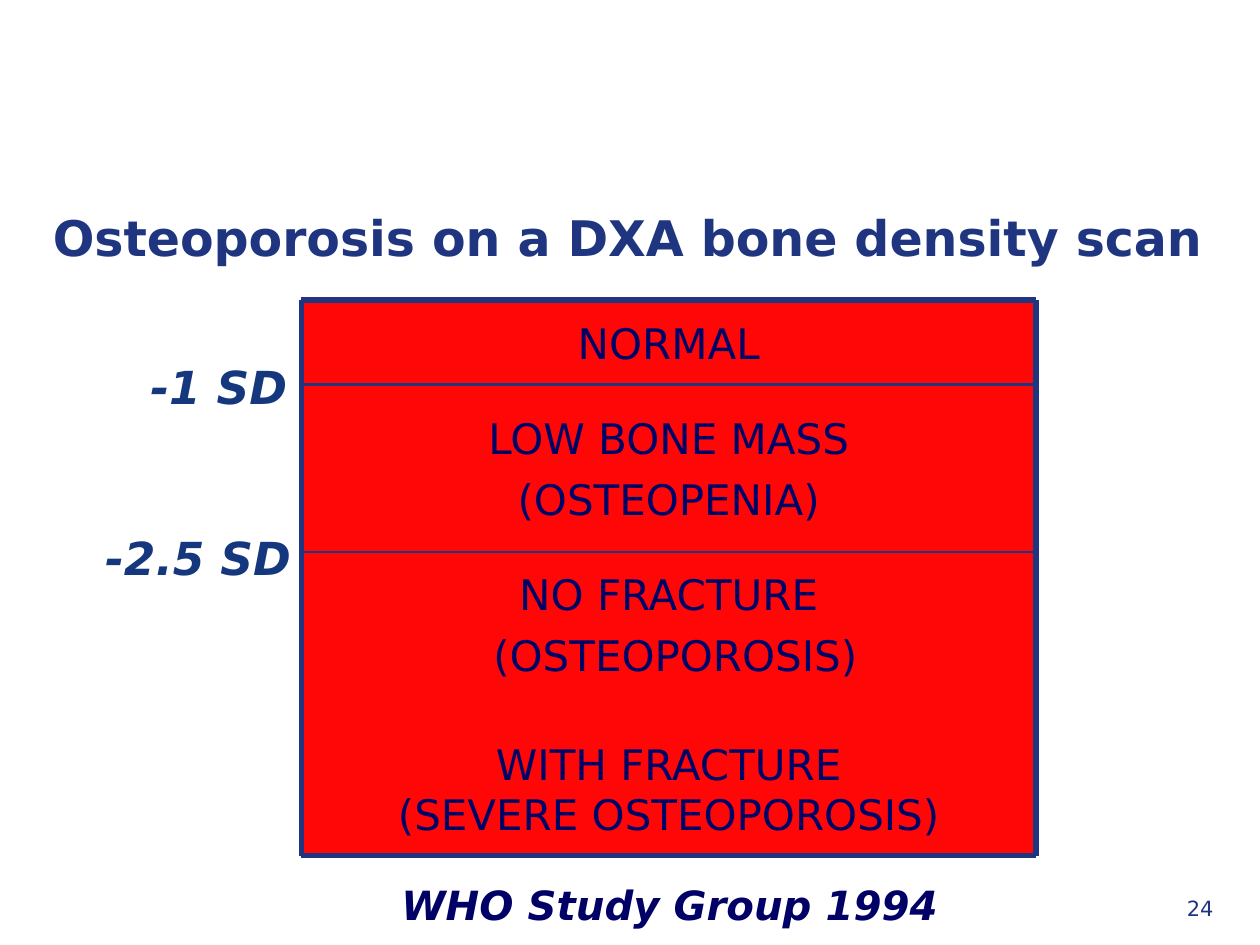
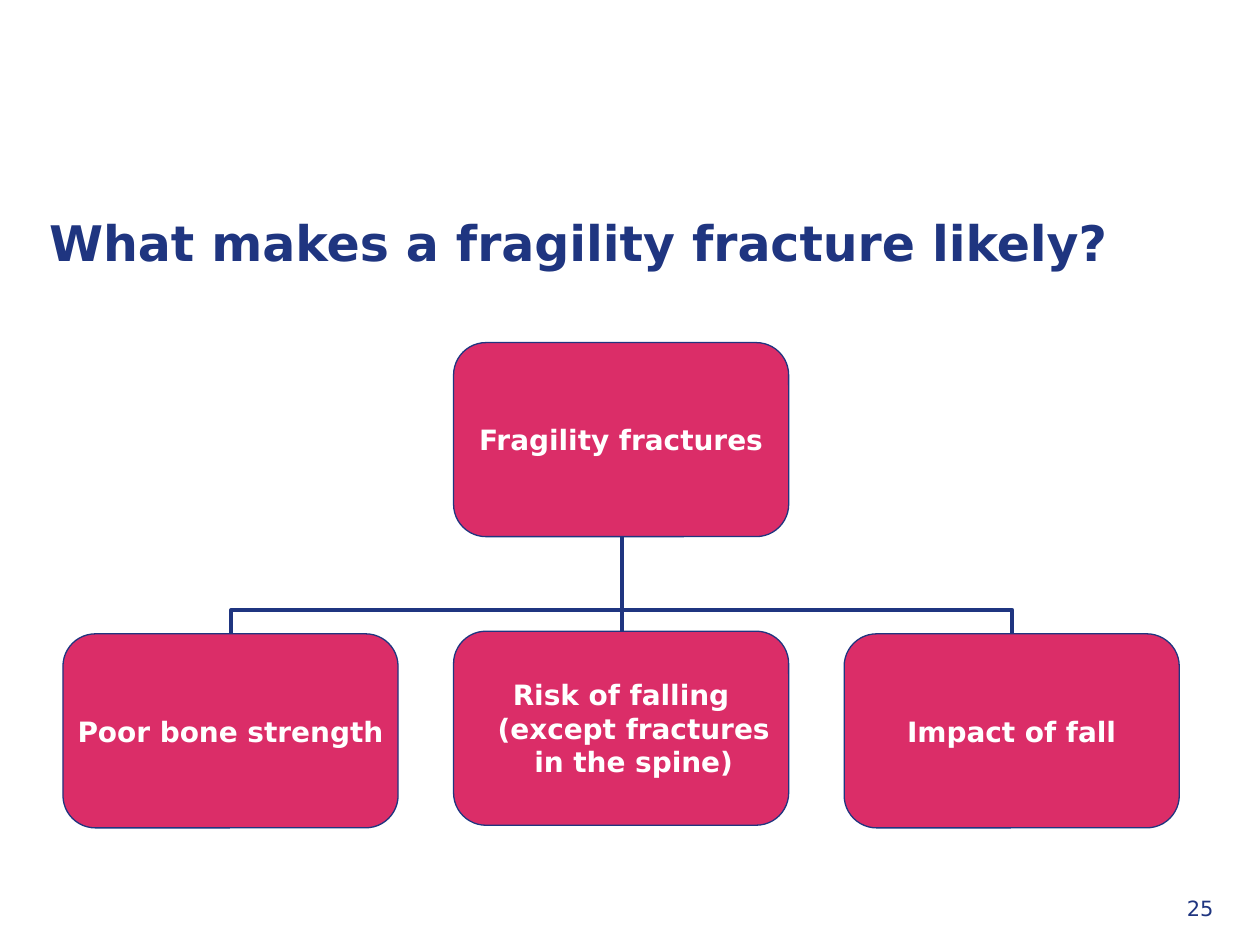
from dataclasses import dataclass
from itertools import pairwise

from lxml.etree import SubElement
from pptx import Presentation
from pptx.dml.color import RGBColor
from pptx.enum.shapes import MSO_CONNECTOR, MSO_SHAPE
from pptx.enum.text import MSO_ANCHOR, PP_ALIGN
from pptx.oxml.ns import qn
from pptx.shapes.autoshape import Shape
from pptx.shapes.connector import Connector
from pptx.slide import Slide
from pptx.text.text import TextFrame
from pptx.util import Pt


@dataclass(frozen=True)
class Theme:
    font: str = "DejaVu Sans"
    navy: str = "1F3580"
    label_blue: str = "14377D"
    ink: str = "000066"
    red: str = "FF0707"
    pink: str = "DB2D68"
    white: str = "FFFFFF"
    title_size: float = 28
    label_size: float = 26
    band_size: float = 24
    source_size: float = 23
    node_size: float = 16
    number_size: float = 12


THEME = Theme()


@dataclass(frozen=True)
class Area:
    left: float
    top: float
    width: float
    height: float

    def lengths(self) -> tuple[Pt, Pt, Pt, Pt]:
        return Pt(self.left), Pt(self.top), Pt(self.width), Pt(self.height)


@dataclass(frozen=True)
class Style:
    size: float
    color: str
    bold: bool = False
    italic: bool = False
    align: PP_ALIGN = PP_ALIGN.CENTER


@dataclass(frozen=True)
class Line:
    text: str
    space_before: float = 0
    indent: float = 0
    margin: float = 0


@dataclass(frozen=True)
class Band:
    top: float
    lines: tuple[Line, ...]


@dataclass(frozen=True)
class Node:
    text: str
    left: float
    top: float


@dataclass(frozen=True)
class Branch:
    begin: tuple[float, float]
    end: tuple[float, float]
    rotation: int


TITLE = Style(THEME.title_size, THEME.navy, bold=True, align=PP_ALIGN.LEFT)
NUMBER = Style(THEME.number_size, THEME.navy, align=PP_ALIGN.RIGHT)
LABEL = Style(THEME.label_size, THEME.label_blue, bold=True, italic=True, align=PP_ALIGN.RIGHT)
BAND = Style(THEME.band_size, THEME.ink)
SOURCE = Style(THEME.source_size, THEME.ink, bold=True, italic=True)
NODE = Style(THEME.node_size, THEME.white, bold=True)

CHART_LEFT, CHART_WIDTH, CHART_BOTTOM = 172.1, 420, 488.9
LINE_GAP, GROUP_GAP, SPACE_WIDTH = 5.7, 33.6, 7.6
BANDS = (
    Band(171.4, (Line("NORMAL"),)),
    Band(219.7, (
        Line("LOW BONE MASS", indent=-2 * SPACE_WIDTH),
        Line("(OSTEOPENIA)", LINE_GAP),
    )),
    Band(315.4, (
        Line("NO FRACTURE", indent=-SPACE_WIDTH),
        Line("(OSTEOPOROSIS)", LINE_GAP, indent=SPACE_WIDTH),
        Line("WITH FRACTURE", GROUP_GAP),
        Line("(SEVERE OSTEOPOROSIS)"),
    )),
)
LABELS = (
    ("-1 SD", Area(65.5, 201.6, 105.8, 38.2)),
    ("-2.5 SD", Area(33.1, 299.5, 140.4, 38.9)),
)

NODE_WIDTH, NODE_HEIGHT, NODE_STEP, NODE_LEFT = 191.5, 110.9, 223.2, 36
HANGING = 14.4
COLUMNS = [NODE_LEFT + NODE_STEP * column for column in range(3)]
NODES = (
    Node("Fragility fractures", COLUMNS[1], 195.8),
    Node("Poor bone strength", COLUMNS[0], 362.2),
    Node("Impact of fall", COLUMNS[2], 362.2),
    Node("Risk of falling\n(except fractures\nin the spine)", COLUMNS[1], 360.7),
)
BRANCHES = (
    Branch((494.6, 222.5), (439.2, 445.7), 90),
    Branch((216, 222.5), (271.4, 445.7), 270),
)


def write_lines(frame: TextFrame, lines: tuple[Line, ...], style: Style) -> None:
    for index, line in enumerate(lines):
        para = frame.paragraphs[0] if index == 0 else frame.add_paragraph()
        para.alignment = style.align
        if line.space_before:
            para.space_before = Pt(line.space_before)
        if line.indent:
            properties = para._p.get_or_add_pPr()
            properties.set("marL", str(Pt(line.margin)))
            properties.set("indent", str(Pt(line.indent)))
        for row, text in enumerate(line.text.split("\n")):
            if row:
                para.add_line_break()
            span = para.add_run()
            span.text = text
            span.font.name = THEME.font
            span.font.size = Pt(style.size)
            span.font.bold = style.bold
            span.font.italic = style.italic
            span.font.color.rgb = RGBColor.from_string(style.color)


def clear_insets(frame: TextFrame, top: float = 0) -> None:
    frame.margin_left = frame.margin_right = frame.margin_bottom = Pt(0)
    frame.margin_top = Pt(top)


def add_text(page: Slide, area: Area, text: str, style: Style) -> TextFrame:
    frame = page.shapes.add_textbox(*area.lengths()).text_frame
    frame.word_wrap = True
    write_lines(frame, (Line(text),), style)
    return frame


def add_panel(page: Slide, kind: MSO_SHAPE, area: Area, fill: str) -> Shape:
    panel = page.shapes.add_shape(kind, *area.lengths())
    panel.shadow.inherit = False
    panel.fill.solid()
    panel.fill.fore_color.rgb = RGBColor.from_string(fill)
    panel.line.fill.background()
    panel.text_frame.vertical_anchor = MSO_ANCHOR.MIDDLE
    return panel


def add_line(page: Slide, begin: tuple[float, float], end: tuple[float, float],
             width: float, kind: MSO_CONNECTOR = MSO_CONNECTOR.STRAIGHT) -> Connector:
    line = page.shapes.add_connector(kind, *(Pt(value) for value in begin + end))
    line.line.color.rgb = RGBColor.from_string(THEME.navy)
    line.line.width = Pt(width)
    SubElement(line._element.spPr, qn("a:effectLst"))
    return line


def add_branch(page: Slide, branch: Branch) -> None:
    line = add_line(page, branch.begin, branch.end, 2.25, MSO_CONNECTOR.ELBOW)
    properties = line._element.spPr
    properties.find(qn("a:xfrm")).set("rot", str(branch.rotation * 60000))
    geometry = properties.find(qn("a:prstGeom"))
    guides = geometry.find(qn("a:avLst"))
    if guides is None:
        guides = SubElement(geometry, qn("a:avLst"))
    SubElement(guides, qn("a:gd"), name="adj1", fmla="val 23900")


def add_node(page: Slide, node: Node) -> None:
    area = Area(node.left, node.top, NODE_WIDTH, NODE_HEIGHT)
    box = add_panel(page, MSO_SHAPE.ROUNDED_RECTANGLE, area, THEME.pink)
    box.adjustments[0] = 0.167
    box.line.color.rgb = RGBColor.from_string(THEME.navy)
    box.line.width = Pt(0.75)
    clear_insets(box.text_frame)
    box.text_frame.word_wrap = False
    write_lines(box.text_frame, (Line(node.text, indent=-HANGING, margin=HANGING),), NODE)


def add_page(deck: Presentation, title: str, left: float, top: float, number: int) -> Slide:
    page = deck.slides.add_slide(deck.slide_layouts[6])
    clear_insets(add_text(page, Area(653.8, 511.9, 39.6, 20.9), str(number), NUMBER))
    clear_insets(add_text(page, Area(left, top, 663.1, 42.5), title, TITLE), top=2.4)
    return page


def build_density_page(deck: Presentation) -> None:
    page = add_page(deck, "Osteoporosis on a DXA bone density scan", 30.2, 115.9, 24)
    for text, area in LABELS:
        add_text(page, area, text, LABEL)
    edges = [band.top for band in BANDS] + [CHART_BOTTOM]
    for band, (top, bottom) in zip(BANDS, pairwise(edges)):
        area = Area(CHART_LEFT, top, CHART_WIDTH, bottom - top)
        panel = add_panel(page, MSO_SHAPE.RECTANGLE, area, THEME.red)
        write_lines(panel.text_frame, band.lines, BAND)
    add_text(page, Area(172.8, 499.7, CHART_WIDTH, 36.7), "WHO Study Group 1994", SOURCE)
    right = CHART_LEFT + CHART_WIDTH
    for edge in edges:
        width = 3 if edge in (edges[0], edges[-1]) else 1.5
        add_line(page, (CHART_LEFT, edge), (right, edge), width)
    for side in (CHART_LEFT, right):
        add_line(page, (side, edges[0]), (side, CHART_BOTTOM), 3)


def build_fracture_page(deck: Presentation) -> None:
    page = add_page(deck, "What makes a fragility fracture likely?", 28.1, 118.8, 25)
    add_line(page, (355.7, 349.2), (355.7, 378), 2.25)
    for branch in BRANCHES:
        add_branch(page, branch)
    for node in NODES:
        add_node(page, node)


def main() -> None:
    deck = Presentation()
    deck.slide_width, deck.slide_height = Pt(720), Pt(540)
    build_density_page(deck)
    build_fracture_page(deck)
    deck.save("out.pptx")


if __name__ == "__main__":
    main()
